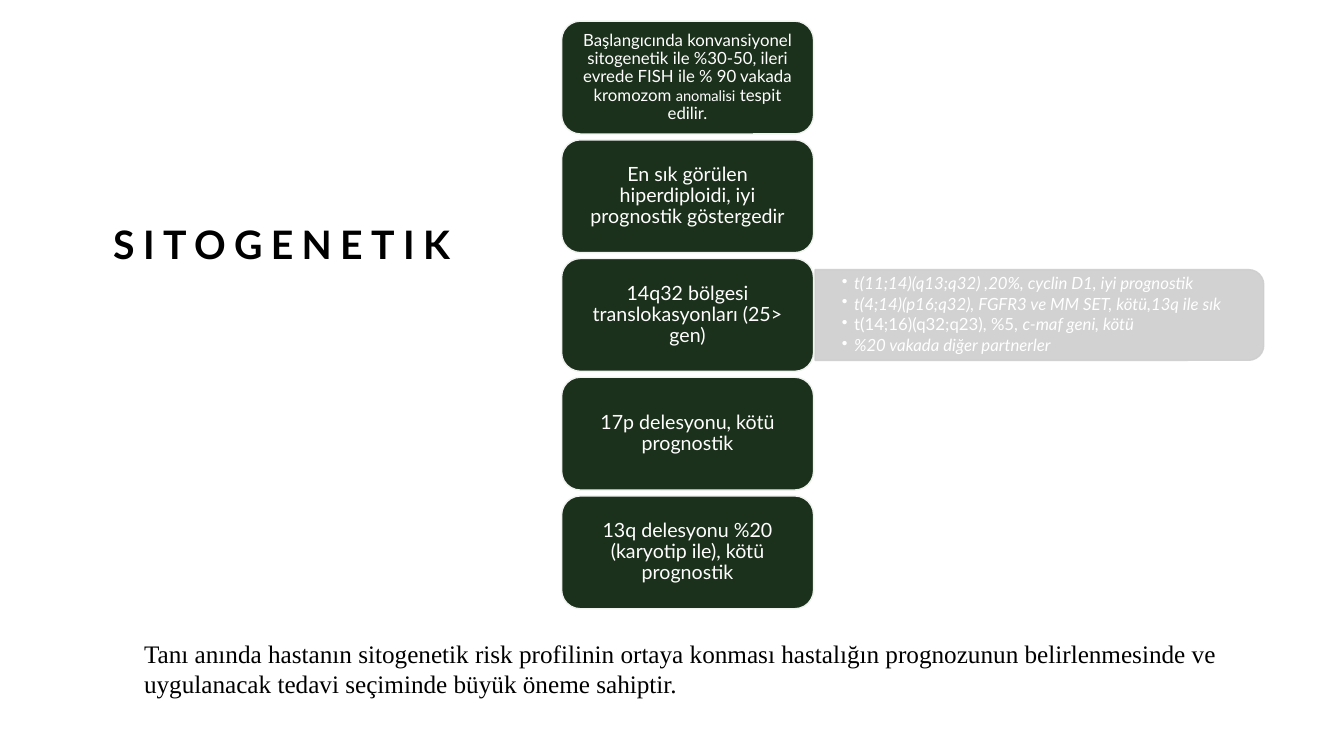
from dataclasses import dataclass

from lxml.etree import SubElement
from pptx import Presentation
from pptx.dml.color import RGBColor
from pptx.enum.shapes import MSO_SHAPE as Shape
from pptx.enum.text import MSO_ANCHOR as Anchor, PP_ALIGN as Align
from pptx.oxml.ns import qn
from pptx.util import Inches, Pt

WHITE = RGBColor(0xFF, 0xFF, 0xFF)
BLACK = RGBColor(0x00, 0x00, 0x00)
GREEN = RGBColor(0x1C, 0x31, 0x1C)
PALE = RGBColor(0xF1, 0xF3, 0xF0)
GRAY = RGBColor(0xCD, 0xCE, 0xCD)

SANS = "Lato"
SERIF = "Times New Roman"

WIDTH, HEIGHT = Inches(13.33), Inches(7.5)
STEP = 15.7  # from one card to the next, in rows


@dataclass
class Area:
    """A place on a grid of 100 columns by 100 rows over the slide."""
    col: float
    row: float
    cols: float
    rows: float

    def place(self) -> tuple[int, int, int, int]:
        return (int(self.col * WIDTH / 100), int(self.row * HEIGHT / 100),
                int(self.cols * WIDTH / 100), int(self.rows * HEIGHT / 100))


@dataclass
class Part:
    text: str
    size: float = 14
    slant: bool = False


TITLE = Area(6, 14.93, 29.93, 33.33)
CARD = Area(41.79, 2.8, 18.75, 14.93)
PANEL = Area(60.65, 35.67, 33.38, 12)
LIST = Area(60.62, 36.27, 33.08, 10.8)
NOTE = Area(9.98, 83.73, 89.5, 9.47)

CARDS = [
    [Part("Başlangıcında konvansiyonel sitogenetik ile %30-50, ileri evrede "
          "FISH ile % 90 vakada kromozom ", 12),
     Part("anomalisi", 10.5), Part(" tespit edilir.", 12)],
    [Part("En sık görülen hiperdiploidi, iyi prognostik göstergedir")],
    [Part("14q32 bölgesi translokasyonları (25> gen)")],
    [Part("17p delesyonu, kötü prognostik")],
    [Part("13q delesyonu %20 (karyotip ile), kötü prognostik")],
]
POINTS = [
    [Part("t(11;14)(q13;q32) ,20%, cyclin D1, iyi prognostik", 12, True)],
    [Part("t(4;14)(p16;q32), FGFR3 ve MM SET, kötü,13q ile sık", 12, True)],
    [Part("t(14;16)(q32;q23), %5, ", 12), Part("c-maf geni, kötü", 12, True)],
    [Part("%20 vakada diğer partnerler", 12, True)],
]


def style(run, size: float, font: str, color: RGBColor) -> None:
    run.font.size = Pt(size)
    run.font.name = font
    run.font.color.rgb = color


def fill_para(para, parts: list[Part]) -> None:
    para.line_spacing = 0.9
    for part in parts:
        run = para.add_run()
        run.text = part.text
        style(run, part.size, SANS, WHITE)
        run.font.italic = part.slant


def set_frame(frame, side: float, edge: float) -> None:
    frame.word_wrap = True
    frame.vertical_anchor = Anchor.MIDDLE
    frame.margin_left = frame.margin_right = Inches(side)
    frame.margin_top = frame.margin_bottom = Inches(edge)


def paint(shape, fill: RGBColor, line: RGBColor) -> None:
    shape.shadow.inherit = False
    shape.fill.solid()
    shape.fill.fore_color.rgb = fill
    shape.line.color.rgb = line
    shape.line.width = Pt(1)


def add_title(slide) -> None:
    title = slide.shapes.title
    title.left, title.top, title.width, title.height = TITLE.place()
    frame = title.text_frame
    frame.text = "SITOGENETIK"
    set_frame(frame, 0.1, 0.05)
    para = frame.paragraphs[0]
    para.alignment = Align.CENTER
    para.line_spacing = 1.2
    run = para.runs[0]
    style(run, 28, SANS, BLACK)
    run.font.bold = True
    run.font._element.set("spc", "600")


def add_panel(slide) -> None:
    """Draw the gray panel, a shape turned so its round corners face right."""
    left, top, wide, high = PANEL.place()
    shift = (wide - high) // 2
    panel = slide.shapes.add_shape(
        Shape.ROUND_2_SAME_RECTANGLE, left + shift, top - shift, high, wide)
    panel.rotation = 90
    paint(panel, GRAY, GRAY)
    for color in panel._element.spPr.iter(qn("a:srgbClr")):
        SubElement(color, qn("a:alpha"), val="90000")


def add_list(slide) -> None:
    frame = slide.shapes.add_textbox(*LIST.place()).text_frame
    set_frame(frame, 0.27, 0)
    for i, parts in enumerate(POINTS):
        para = frame.paragraphs[0] if i == 0 else frame.add_paragraph()
        para.space_after = Pt(1.8)
        props = para._p.get_or_add_pPr()
        props.set("marL", str(Inches(0.12)))
        props.set("indent", str(Inches(-0.12)))
        SubElement(props, qn("a:buChar"), char="•")
        fill_para(para, parts)


def add_card(slide, index: int, parts: list[Part]) -> None:
    area = Area(CARD.col, CARD.row + index * STEP, CARD.cols, CARD.rows)
    card = slide.shapes.add_shape(Shape.ROUNDED_RECTANGLE, *area.place())
    paint(card, GREEN, PALE)
    set_frame(card.text_frame, 0.06, 0.03)
    para = card.text_frame.paragraphs[0]
    para.alignment = Align.CENTER
    fill_para(para, parts)


def add_note(slide) -> None:
    frame = slide.shapes.add_textbox(*NOTE.place()).text_frame
    frame.word_wrap = True
    frame.text = (
        "Tanı anında hastanın sitogenetik risk profilinin ortaya konması "
        "hastalığın prognozunun belirlenmesinde ve uygulanacak tedavi "
        "seçiminde büyük öneme sahiptir.")
    style(frame.paragraphs[0].runs[0], 18, SERIF, BLACK)


def main() -> None:
    deck = Presentation()
    deck.slide_width, deck.slide_height = WIDTH, HEIGHT
    slide = deck.slides.add_slide(deck.slide_layouts[5])
    add_title(slide)
    add_panel(slide)
    add_list(slide)
    for index, parts in enumerate(CARDS):
        add_card(slide, index, parts)
    add_note(slide)
    deck.save("out.pptx")


if __name__ == "__main__":
    main()
